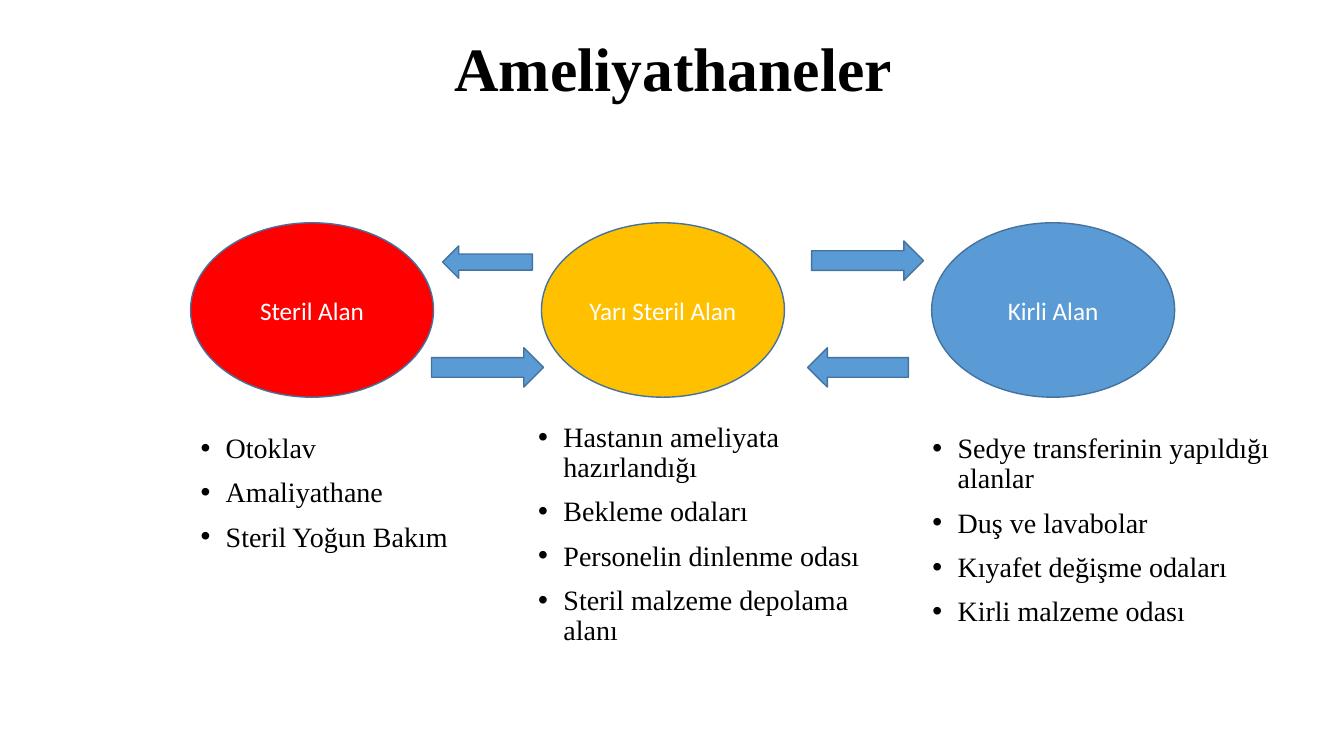
from lxml.etree import SubElement
from pptx import Presentation
from pptx.dml.color import RGBColor
from pptx.enum.shapes import MSO_SHAPE
from pptx.enum.text import MSO_ANCHOR, PP_ALIGN
from pptx.oxml.ns import qn
from pptx.util import Inches, Pt

BLACK = RGBColor(0x00, 0x00, 0x00)
WHITE = RGBColor(0xFF, 0xFF, 0xFF)
RED = RGBColor(0xFF, 0x00, 0x00)
AMBER = RGBColor(0xFF, 0xC0, 0x00)
BLUE = RGBColor(0x5B, 0x9B, 0xD5)
OUTLINE = RGBColor(0x43, 0x73, 0x9E)

ZONE_TOP, ZONE_WIDTH, ZONE_HEIGHT = 29.47, 18.08, 23.07

ZONES = [
    ("Steril Alan", RED, 14.18, (14.18, 56.8, 21.61, 20.67),
     ["Otoklav", "Amaliyathane", "Steril Yoğun Bakım"]),
    ("Yarı Steril Alan", AMBER, 40.29, (39.31, 55.33, 26.71, 29.47),
     ["Hastanın ameliyata hazırlandığı", "Bekleme odaları",
      "Personelin dinlenme odası", "Steril malzeme depolama alanı"]),
    ("Kirli Alan", BLUE, 69.32, (68.64, 56.8, 27.08, 29.47),
     ["Sedye transferinin yapıldığı alanlar", "Duş ve lavabolar",
      "Kıyafet değişme odaları", "Kirli malzeme odası"]),
]

ARROWS = [
    ((60.39, 31.87, 8.33, 5.2), 0),
    ((32.11, 46, 8.33, 5.2), 0),
    ((32.93, 32.53, 6.68, 4.27), 180),
    ((60.09, 46, 7.5, 5.2), 180),
]


class Deck:
    serif = "Times New Roman"
    sans = "Calibri"

    def __init__(self):
        self.prs = Presentation()
        self.prs.slide_width = Inches(13.33)
        self.prs.slide_height = Inches(7.5)
        self.slide = self.prs.slides.add_slide(self.prs.slide_layouts[6])

    def place(self, box):
        sizes = (self.prs.slide_width, self.prs.slide_height) * 2
        return [round(size * share / 100) for size, share in zip(sizes, box)]

    def style(self, p, font, size, color, bold=False):
        for r in p.runs:
            r.font.name = font
            r.font.size = Pt(size)
            r.font.color.rgb = color
            r.font.bold = bold

    def text_box(self, box, text):
        tf = self.slide.shapes.add_textbox(*self.place(box)).text_frame
        tf.word_wrap = True
        tf.text = text
        for p in tf.paragraphs:
            p.line_spacing = 0.9
        return tf

    def title(self, box, text):
        tf = self.text_box(box, text)
        tf.vertical_anchor = MSO_ANCHOR.MIDDLE
        p = tf.paragraphs[0]
        p.alignment = PP_ALIGN.CENTER
        self.style(p, self.serif, 44, BLACK, bold=True)

    def bullets(self, box, items):
        for p in self.text_box(box, "\n".join(items)).paragraphs:
            p.space_before = Pt(10)
            self.style(p, self.serif, 20, BLACK)
            pPr = p._p.get_or_add_pPr()
            pPr.set("marL", str(Inches(0.25)))
            pPr.set("indent", str(-Inches(0.25)))
            SubElement(pPr, qn("a:buFont"), typeface="Arial")
            SubElement(pPr, qn("a:buChar"), char="•")

    def shape(self, kind, box, fill):
        sp = self.slide.shapes.add_shape(kind, *self.place(box))
        sp.shadow.inherit = False
        sp.fill.solid()
        sp.fill.fore_color.rgb = fill
        sp.line.color.rgb = OUTLINE
        sp.line.width = Pt(1)
        return sp

    def zone(self, left, name, fill):
        box = (left, ZONE_TOP, ZONE_WIDTH, ZONE_HEIGHT)
        tf = self.shape(MSO_SHAPE.OVAL, box, fill).text_frame
        tf.text = name
        tf.vertical_anchor = MSO_ANCHOR.MIDDLE
        p = tf.paragraphs[0]
        p.alignment = PP_ALIGN.CENTER
        self.style(p, self.sans, 18, WHITE)

    def arrow(self, box, rotation):
        self.shape(MSO_SHAPE.RIGHT_ARROW, box, BLUE).rotation = rotation


def main():
    deck = Deck()
    deck.title((6.98, 1.47, 86.27, 15.87), "Ameliyathaneler")
    for name, fill, left, list_box, items in ZONES:
        deck.zone(left, name, fill)
        deck.bullets(list_box, items)
    for box, rotation in ARROWS:
        deck.arrow(box, rotation)
    deck.prs.save("out.pptx")


if __name__ == "__main__":
    main()
